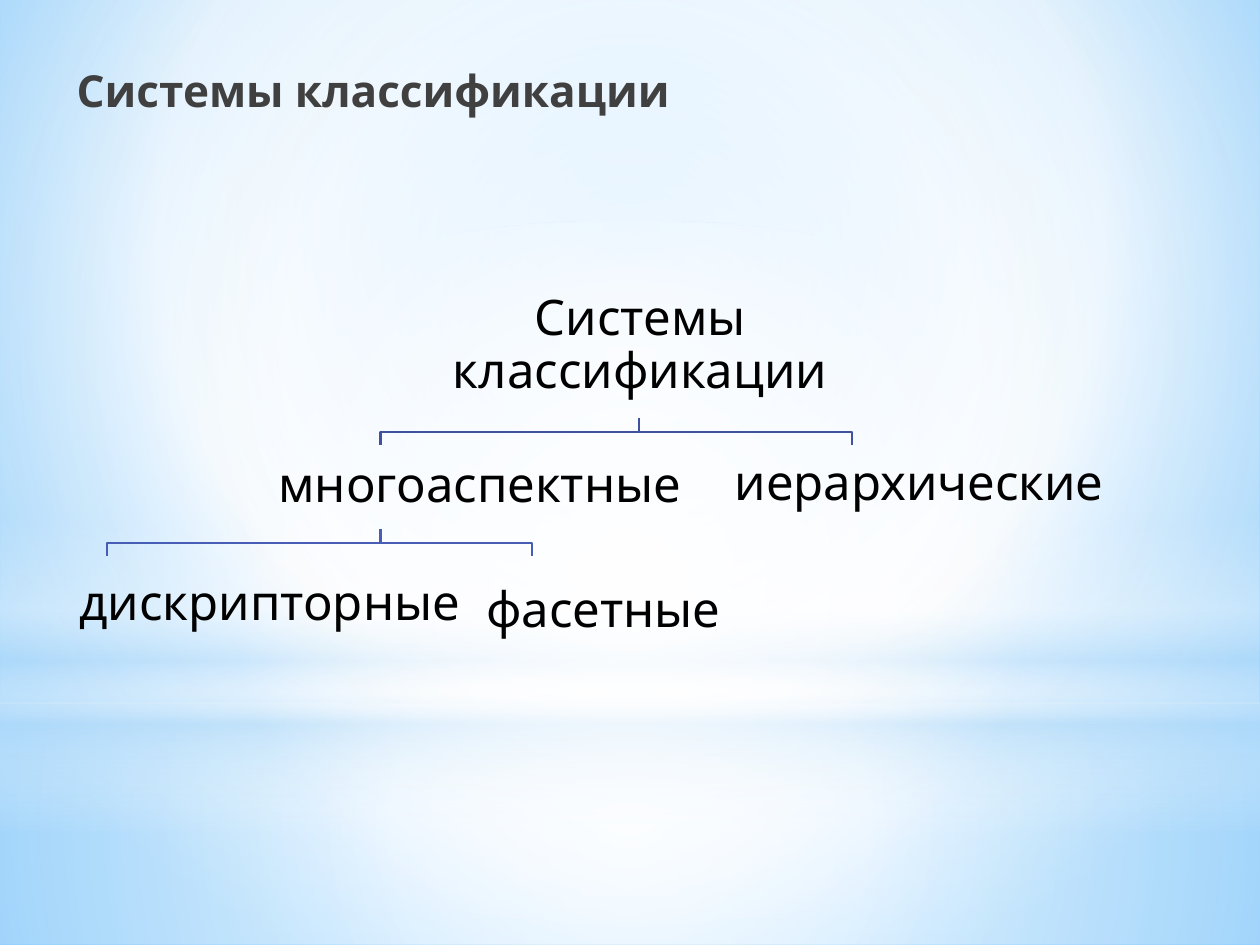
from lxml import etree
from pptx import Presentation
from pptx import util as u
from pptx.dml.color import RGBColor
from pptx.enum import shapes, text
from pptx.oxml.ns import qn


def color(value):
    return RGBColor.from_string(value)


class Deck:
    font = "Karla"
    black = "000000"

    def __init__(self, prs):
        self.s = prs.slides.add_slide(prs.slide_layouts[6])
        self.diagram = None

    def gradient(self, fill, root, stops, center=None, angle=90):
        fill.gradient()
        grad = root.find(".//" + qn("a:gradFill"))
        for child in list(grad):
            grad.remove(child)
        grad.set("rotWithShape", "1")
        items = etree.SubElement(grad, qn("a:gsLst"))
        for pos, value, alpha in stops:
            gs = etree.SubElement(items, qn("a:gs"), pos=str(pos * 1000))
            clr = etree.SubElement(gs, qn("a:srgbClr"), val=value)
            if alpha < 100:
                etree.SubElement(clr, qn("a:alpha"), val=str(alpha * 1000))
        if center:
            way = etree.SubElement(grad, qn("a:path"), path="circle")
            sides = {k: str(v * 1000) for k, v in zip("ltrb", center)}
            etree.SubElement(way, qn("a:fillToRect"), **sides)
        else:
            etree.SubElement(grad, qn("a:lin"), ang=str(angle * 60000), scaled="0")

    def background(self, stops, center):
        self.gradient(self.s.background.fill, self.s.element, stops, center)

    def glow(self, kind, top, height, stops, center=(50, 50, 50, 50)):
        sp = self.s.shapes.add_shape(
            kind, 0, u.Inches(top), u.Inches(10), u.Inches(height))
        sp.shadow.inherit = False
        sp.line.fill.background()
        self.gradient(sp.fill, sp.element, stops, center)

    def label(self, box, words, size=28, value=black, bold=False,
              align=text.PP_ALIGN.LEFT, inset=0.12, spacing=0.9):
        parent = self.diagram or self.s
        sp = parent.shapes.add_textbox(*map(u.Inches, box))
        tf = sp.text_frame
        tf.word_wrap = True
        tf.vertical_anchor = text.MSO_ANCHOR.MIDDLE
        tf.margin_left = tf.margin_right = u.Inches(inset)
        tf.margin_top = tf.margin_bottom = u.Inches(inset)
        tf.text = words
        p = tf.paragraphs[0]
        p.alignment = align
        p.line_spacing = spacing
        f = p.runs[0].font
        f.name, f.size, f.bold = self.font, u.Pt(size), bold
        f.color.rgb = color(value)

    def branch(self, x, y, child_x, value):
        elbow = y + 0.11
        points = [(x, elbow), (child_x, elbow), (child_x, y + 0.21)]
        fb = self.diagram.shapes.build_freeform(u.Inches(x), u.Inches(y))
        fb.add_line_segments(
            [(u.Inches(a), u.Inches(b)) for a, b in points], close=False)
        sp = fb.convert_to_shape()
        sp.shadow.inherit = False
        sp.fill.background()
        sp.line.color.rgb = color(value)
        sp.line.width = u.Pt(1.25)

    def start_diagram(self):
        self.diagram = self.s.shapes.add_group_shape()


def main():
    prs = Presentation()
    prs.slide_width, prs.slide_height = u.Inches(10), u.Inches(7.5)
    deck = Deck(prs)
    rect, oval = shapes.MSO_SHAPE.RECTANGLE, shapes.MSO_SHAPE.OVAL
    white, sky = "FFFFFF", "B4DCFA"

    deck.background([(0, "9ED5FF", 100), (60, white, 100), (100, "5BB9FF", 100)],
                    (20, 10, 20, 60))
    deck.glow(rect, 5.58, 1.92, [(0, white, 91), (37, white, 76), (100, sky, 79)])
    deck.glow(rect, 0, 5.58, [(0, white, 89), (48, white, 62), (100, sky, 79)])
    deck.glow(rect, 4.12, 2.5,
              [(0, white, 0), (29, white, 30), (45, sky, 40),
               (55, white, 26), (65, sky, 60), (100, white, 0)], center=None)
    deck.glow(oval, 1.75, 5.58, [(0, white, 100), (56, white, 0)])

    deck.label((0.51, 0.44, 9.37, 0.55), "Системы классификации", size=25.2,
               value="404040", bold=True, inset=0.1, spacing=1.0)

    deck.start_diagram()
    for x, y, children, value in [(5.07, 3.32, (6.76, 3.02), "3E52A0"),
                                  (3.02, 4.2, (4.22, 0.85), "475DB6")]:
        for child_x in children:
            deck.branch(x, y, child_x, value)

    deck.label((3.19, 2.41, 3.78, 0.67), "Системы классификации",
               align=text.PP_ALIGN.CENTER)
    for box, words in [((5.71, 3.51, 3.2, 0.67), "иерархические"),
                       ((3.74, 4.54, 2.14, 0.62), "фасетные"),
                       ((0.51, 4.46, 4.27, 0.67), "дискрипторные"),
                       ((2.09, 3.53, 3.94, 0.67), "многоаспектные")]:
        deck.label(box, words)
    prs.save("out.pptx")


if __name__ == "__main__":
    main()
